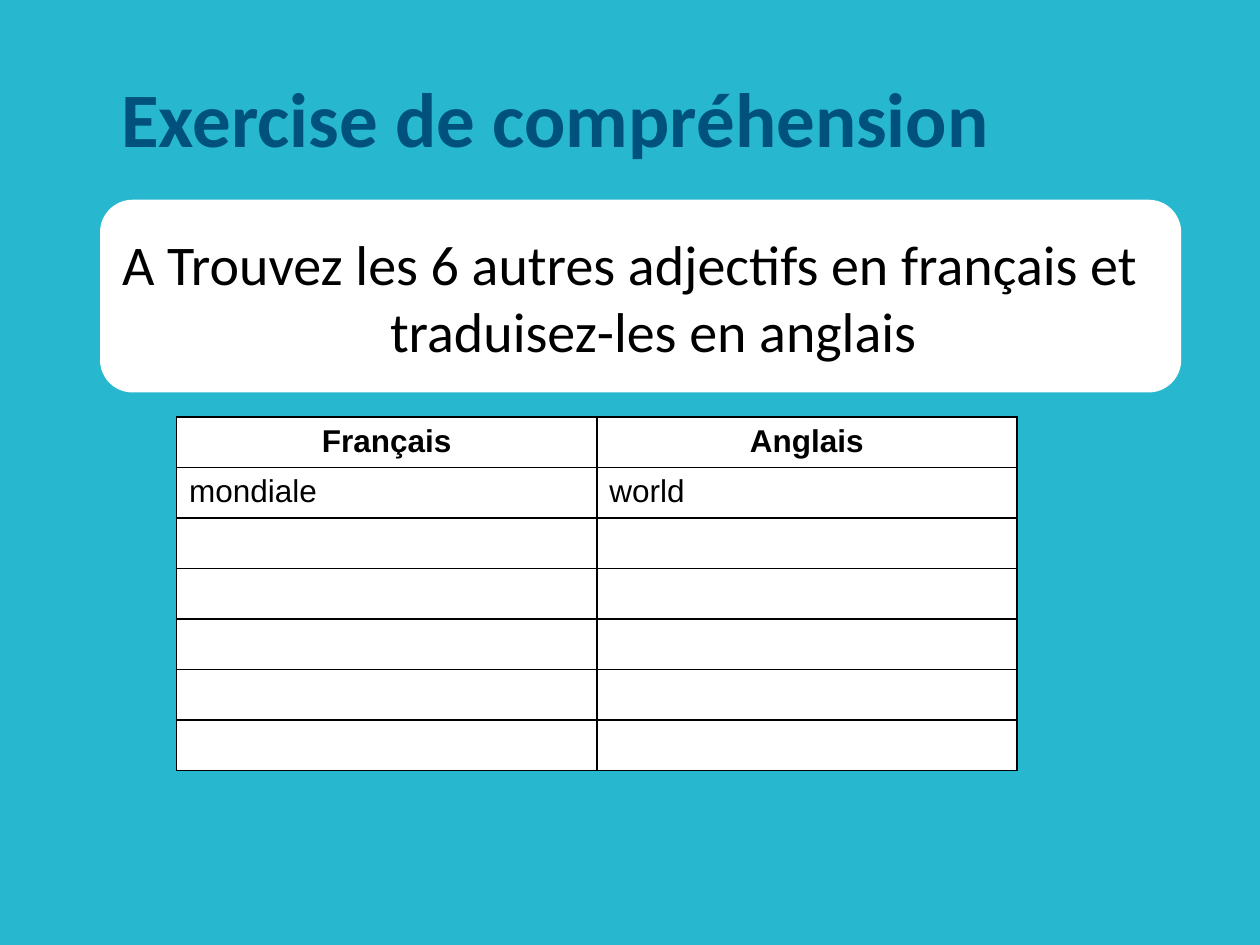
"""Build a French comprehension exercise slide with a vocabulary table."""
from dataclasses import dataclass

from lxml.etree import SubElement
from pptx import Presentation
from pptx.dml.color import RGBColor
from pptx.enum.shapes import MSO_SHAPE
from pptx.enum.text import MSO_ANCHOR, PP_ALIGN
from pptx.oxml.ns import qn
from pptx.util import Cm, Pt


@dataclass(frozen=True)
class Theme:
    background: RGBColor = RGBColor(0x27, 0xB8, 0xCF)
    title: RGBColor = RGBColor(0x00, 0x52, 0x7D)
    white: RGBColor = RGBColor(0xFF, 0xFF, 0xFF)
    black: RGBColor = RGBColor(0x00, 0x00, 0x00)
    heading_font: str = "Calibri"
    table_font: str = "Arial"
    title_size: int = 44
    task_size: int = 32
    table_size: int = 18


def write(text_frame, text, font_name, size, color, bold=False, align=PP_ALIGN.LEFT):
    text_frame.text = text
    text_frame.word_wrap = True
    paragraph = text_frame.paragraphs[0]
    paragraph.alignment = align
    for run in paragraph.runs:
        run.font.name = font_name
        run.font.size = Pt(size)
        run.font.bold = bold
        run.font.color.rgb = color
    return paragraph


def add_borders(cell, color):
    properties = cell._tc.get_or_add_tcPr()
    for side in ("a:lnL", "a:lnR", "a:lnT", "a:lnB"):
        line = SubElement(properties, qn(side), w=str(Pt(1)))
        fill = SubElement(line, qn("a:solidFill"))
        SubElement(fill, qn("a:srgbClr"), val=str(color))


theme = Theme()
presentation = Presentation()
presentation.slide_width = Cm(25.4)
presentation.slide_height = Cm(19.05)
slide = presentation.slides.add_slide(presentation.slide_layouts[6])
slide.background.fill.solid()
slide.background.fill.fore_color.rgb = theme.background

panel = slide.shapes.add_shape(
    MSO_SHAPE.ROUNDED_RECTANGLE, Cm(2.03), Cm(4.04), Cm(21.77), Cm(3.86))
panel.shadow.inherit = False
panel.fill.solid()
panel.fill.fore_color.rgb = theme.white
panel.line.color.rgb = theme.white
panel.line.width = Pt(0.75)

title = slide.shapes.add_textbox(Cm(2.2), Cm(0.76), Cm(21.93), Cm(3.18))
title.text_frame.vertical_anchor = MSO_ANCHOR.MIDDLE
write(title.text_frame, "Exercise de compréhension", theme.heading_font,
      theme.title_size, theme.title, bold=True)

task = slide.shapes.add_textbox(Cm(1.27), Cm(4.5), Cm(22.86), Cm(3.4))
paragraph = write(
    task.text_frame,
    "A Trouvez les 6 autres adjectifs en français et traduisez-les en anglais",
    theme.heading_font, theme.task_size, theme.black, align=PP_ALIGN.CENTER)
paragraph_properties = paragraph._p.get_or_add_pPr()
paragraph_properties.set("marL", str(Cm(0.95)))
paragraph_properties.set("indent", str(-Cm(0.95)))

rows = [("Français", "Anglais"), ("mondiale", "world")] + [("", "")] * 5
table = slide.shapes.add_table(
    len(rows), 2, Cm(3.56), Cm(8.41), Cm(16.94), Cm(len(rows))).table
for row_index, row in enumerate(rows):
    is_header = row_index == 0
    for column_index, text in enumerate(row):
        cell = table.cell(row_index, column_index)
        add_borders(cell, theme.black)
        cell.fill.solid()
        cell.fill.fore_color.rgb = theme.white
        write(cell.text_frame, text, theme.table_font, theme.table_size, theme.black,
              bold=is_header, align=PP_ALIGN.CENTER if is_header else PP_ALIGN.LEFT)

presentation.save("out.pptx")
